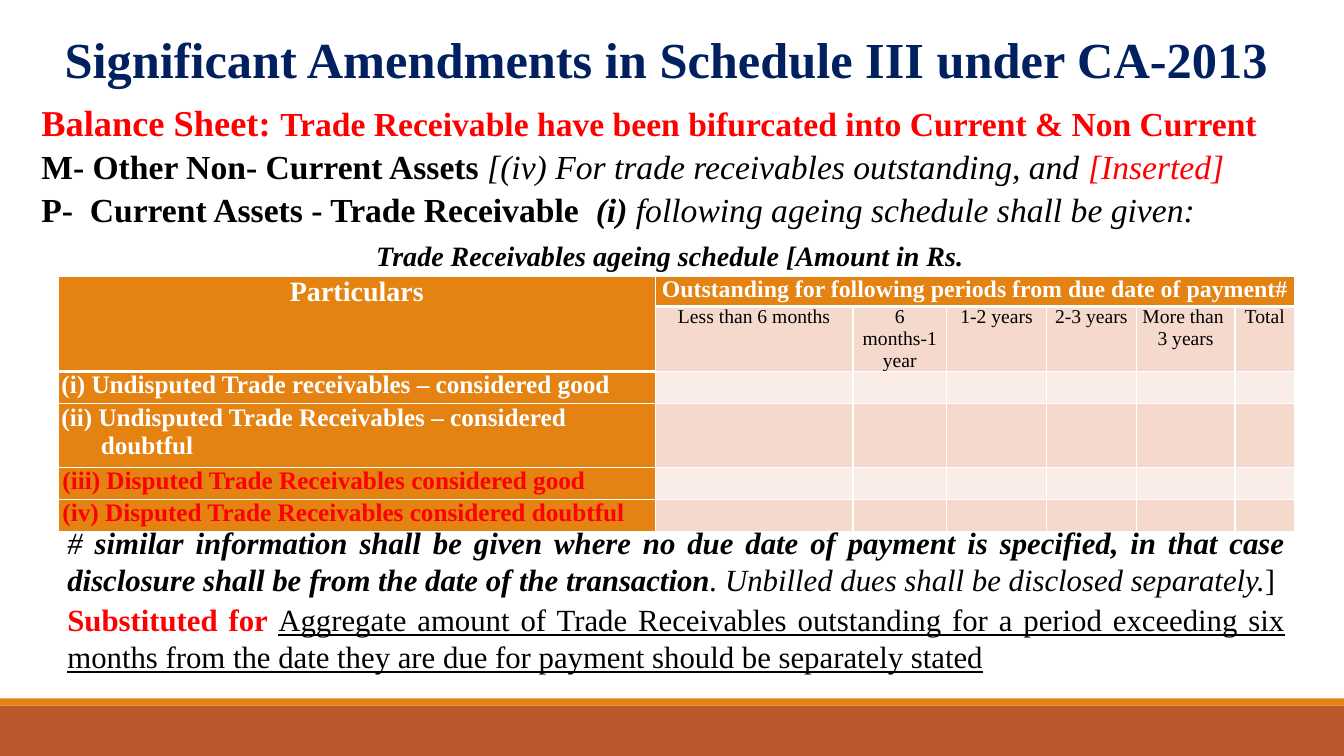
from lxml.etree import SubElement
from pptx import Presentation
from pptx.dml.color import RGBColor
from pptx.enum.shapes import MSO_SHAPE as Shape
from pptx.enum.text import MSO_ANCHOR as Anchor, MSO_AUTO_SIZE as AutoSize, PP_ALIGN as Align
from pptx.oxml.ns import qn
from pptx.util import Inches, Pt

FONT = "Times New Roman"
BLACK, WHITE, RED, NAVY = "000000", "FFFFFF", "FF0000", "002060"
ORANGE, RUST, BAND_DARK, BAND_LIGHT = "E48312", "BD582C", "F5D9CC", "FAEDE7"

# Each run: text, colour, styles (b, i, u), optional size
BALANCE_SHEET = [
    [("Balance Sheet: ", RED, "b", 26),
     ("Trade Receivable have been bifurcated into Current & Non Current", RED, "b")],
    [("M- Other Non- Current Assets ", BLACK, "b"),
     ("[(iv) For trade receivables outstanding, and ", BLACK, "i"),
     ("[Inserted] ", RED, "i")],
    [("P-  Current Assets - Trade Receivable  ", BLACK, "b"),
     ("(i) ", BLACK, "bi"),
     ("following ageing schedule shall be given:", BLACK, "i")],
]
SCHEDULE_CAPTION = [("Trade Receivables ageing schedule [Amount in Rs.", BLACK, "bi")]
FOOTNOTES = [
    [("# ", BLACK, "i"),
     ("similar information shall be given where no due date of payment is specified, "
      "in that case disclosure shall be from the date of the transaction", BLACK, "bi"),
     (". Unbilled dues shall be disclosed separately.", BLACK, "i"),
     ("]", BLACK, "")],
    [("Substituted for ", RED, "b"),
     ("Aggregate amount of Trade Receivables outstanding for a period exceeding six "
      "months from the date they are due for payment should be separately stated", BLACK, "u")],
]

# Ageing schedule
PERIODS = ["Less than 6 months", "6 months-1 year", "1-2 years", "2-3 years",
           "More than \n3 years", "Total"]
RECEIVABLES = [
    ("(i) Undisputed Trade receivables – considered good", WHITE, 0.03),
    ("(ii) Undisputed Trade Receivables – considered doubtful", WHITE, 0.03),
    ("(iii) Disputed Trade Receivables considered good", RED, 0.04),
    ("(iv) Disputed Trade Receivables considered doubtful", RED, 0.04),
]
COLUMN_WIDTHS = [5.92, 1.96, 0.93, 0.99, 0.89, 0.98, 0.59]
ROW_HEIGHTS = [0.3, 0.49, 0.32, 0.63, 0.32, 0.32]


def rgb(colour):
    return RGBColor.from_string(colour)


def place(shape, left, top, width, height):
    shape.left, shape.top = Inches(left), Inches(top)
    shape.width, shape.height = Inches(width), Inches(height)


def format_paragraph(paragraph, size, align, space=1):
    paragraph.alignment = align
    paragraph.space_before = paragraph.space_after = Pt(space)
    paragraph.font.name = FONT
    paragraph.font.size = Pt(size)


def add_runs(paragraph, runs):
    for text, colour, styles, *size in runs:
        run = paragraph.add_run()
        run.text = text
        run.font.color.rgb = rgb(colour)
        run.font.bold = "b" in styles
        run.font.italic = "i" in styles
        run.font.underline = "u" in styles
        if size:
            run.font.size = Pt(size[0])


def next_paragraph(frame):
    first = frame.paragraphs[0]
    return frame.add_paragraph() if first.runs else first


def remove_bullet(paragraph):
    properties = paragraph._p.get_or_add_pPr()
    properties.set("marL", "0")
    properties.set("indent", "0")
    SubElement(properties, qn("a:buNone"))


def add_bar(slide, top, height, colour):
    bar = slide.shapes.add_shape(Shape.RECTANGLE, 0, Inches(top), Inches(13.33), Inches(height))
    bar.shadow.inherit = False
    bar.fill.solid()
    bar.fill.fore_color.rgb = rgb(colour)
    bar.line.fill.background()


def set_borders(cell, bottom_width):
    properties = cell._tc.get_or_add_tcPr()
    widths = {"a:lnL": 1, "a:lnR": 1, "a:lnT": 1, "a:lnB": bottom_width}
    for position, (side, width) in enumerate(widths.items()):
        line = properties.makeelement(qn(side), {"w": str(Pt(width))})
        SubElement(SubElement(line, qn("a:solidFill")), qn("a:srgbClr"), val=WHITE)
        properties.insert(position, line)


def fill_cell(cell, fill, text="", size=14, colour=BLACK, bold=False,
              align=Align.CENTER, inset=0.03, hanging=0):
    cell.fill.solid()
    cell.fill.fore_color.rgb = rgb(fill)
    cell.margin_left = cell.margin_right = Inches(inset)
    cell.margin_top = cell.margin_bottom = 0
    paragraph = cell.text_frame.paragraphs[0]
    if text:
        paragraph.text = text
    format_paragraph(paragraph, size, align)
    paragraph.font.bold = bold
    paragraph.font.color.rgb = rgb(colour)
    if hanging:
        properties = paragraph._p.get_or_add_pPr()
        properties.set("marL", str(Inches(hanging)))
        properties.set("indent", str(-Inches(hanging)))


def add_ageing_schedule(slide):
    table = slide.shapes.add_table(len(ROW_HEIGHTS), len(COLUMN_WIDTHS), Inches(0.58),
                                   Inches(2.74), Inches(12.26), Inches(2.37)).table
    table.first_row = table.horz_banding = False
    for column, width in zip(table.columns, COLUMN_WIDTHS):
        column.width = Inches(width)
    for row, height in zip(table.rows, ROW_HEIGHTS):
        row.height = Inches(height)

    # Headings
    table.cell(0, 0).merge(table.cell(1, 0))
    table.cell(0, 1).merge(table.cell(0, 6))
    fill_cell(table.cell(0, 0), ORANGE, "Particulars", 20, WHITE, True, inset=0.06)
    fill_cell(table.cell(0, 1), ORANGE,
              "Outstanding for following periods from due date of payment#",
              17, WHITE, True, inset=0.06)
    for column, period in enumerate(PERIODS, 1):
        fill_cell(table.cell(1, column), BAND_DARK, period)

    # Receivables with empty amounts
    for row, (label, colour, inset) in enumerate(RECEIVABLES, 2):
        fill_cell(table.cell(row, 0), ORANGE, label, 18, colour, True, Align.LEFT, inset, 0.39)
        for column in range(1, len(COLUMN_WIDTHS)):
            fill_cell(table.cell(row, column), BAND_DARK if row % 2 else BAND_LIGHT)

    # White grid, heavier under the headings
    for row in range(len(ROW_HEIGHTS)):
        for column in range(len(COLUMN_WIDTHS)):
            under_heading = row == 0 or (row, column) == (1, 0)
            set_borders(table.cell(row, column), 3 if under_heading else 1)


def add_title(slide):
    title = slide.shapes.title
    place(title, 0.24, 0.23, 12.74, 0.71)
    title.text_frame.auto_size = AutoSize.NONE
    title.text_frame.vertical_anchor = Anchor.TOP
    heading = title.text_frame.paragraphs[0]
    heading.text = "Significant Amendments in Schedule III under CA-2013"
    format_paragraph(heading, 36, Align.CENTER, 0)
    heading.font.bold = True
    heading.font.color.rgb = rgb(NAVY)


def add_balance_sheet(slide):
    body = slide.placeholders[1]
    place(body, 0.31, 0.94, 12.67, 1.8)
    frame = body.text_frame
    frame.auto_size = AutoSize.NONE
    for runs in BALANCE_SHEET:
        paragraph = next_paragraph(frame)
        add_runs(paragraph, runs)
        remove_bullet(paragraph)
        format_paragraph(paragraph, 24, Align.JUSTIFY)
    caption = next_paragraph(frame)
    add_runs(caption, SCHEDULE_CAPTION)
    remove_bullet(caption)
    format_paragraph(caption, 20, Align.CENTER, 2)
    caption.line_spacing = 1.15


def add_footnotes(slide):
    frame = slide.shapes.add_textbox(Inches(0.57), Inches(5.15),
                                     Inches(12.27), Inches(1.61)).text_frame
    frame.word_wrap = True
    for runs in FOOTNOTES:
        paragraph = next_paragraph(frame)
        add_runs(paragraph, runs)
        format_paragraph(paragraph, 22, Align.JUSTIFY)


def main():
    deck = Presentation()
    deck.slide_width, deck.slide_height = Inches(13.33), Inches(7.5)
    slide = deck.slides.add_slide(deck.slide_layouts[1])
    add_bar(slide, 7, 0.5, RUST)
    add_bar(slide, 6.93, 0.07, ORANGE)
    add_title(slide)
    add_balance_sheet(slide)
    add_ageing_schedule(slide)
    add_footnotes(slide)
    deck.save("out.pptx")


if __name__ == "__main__":
    main()
